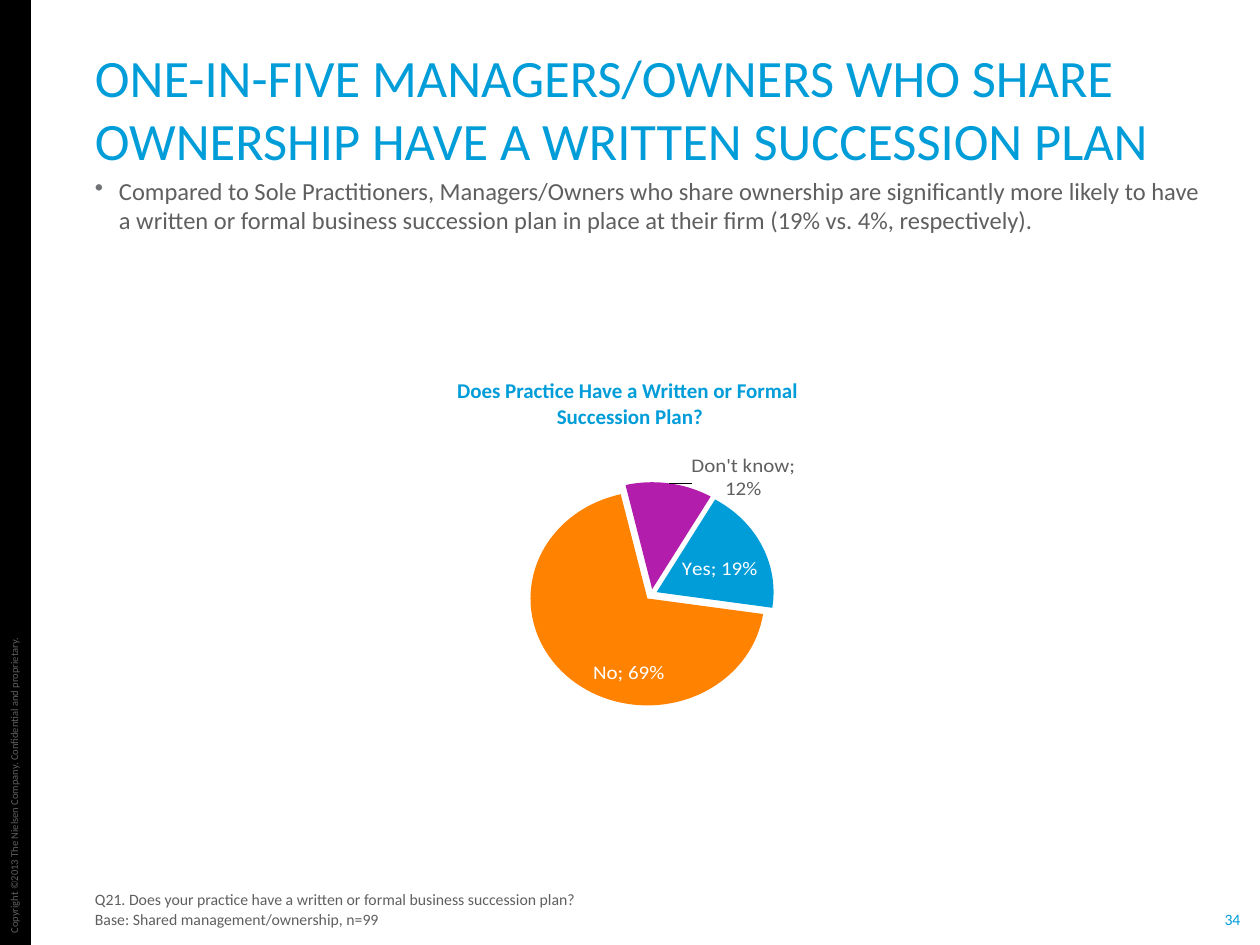
from lxml.etree import SubElement
from pptx import Presentation
from pptx.chart.data import CategoryChartData as Data
from pptx.dml.color import RGBColor as Rgb
from pptx.enum.chart import XL_CHART_TYPE as Kind, XL_LABEL_POSITION as Spot
from pptx.enum.shapes import MSO_SHAPE as Form
from pptx.enum.text import MSO_ANCHOR as Anchor, MSO_AUTO_SIZE as Fit, PP_ALIGN as Align
from pptx.oxml import parse_xml
from pptx.oxml.ns import nsdecls, qn
from pptx.util import Pt

EMU = 914400 / 126
HUES = {"blue": "009DD9", "orange": "FF8300", "purple": "B21DAC",
        "gray": "5F5F5F", "dot": "707276", "black": "000000", "white": "FFFFFF"}


def px(n):
    return round(n * EMU)


def rgb(hue):
    return Rgb.from_string(HUES[hue])


def layout(x, y, w=None, h=None):
    """Manual chart layout: an offset for a label, a full frame for the plot."""
    parts = [("x", x), ("y", y)]
    if w is not None:
        parts = [("xMode", "edge"), ("yMode", "edge")] + parts + [("w", w), ("h", h)]
        parts.insert(0, ("layoutTarget", "inner"))
    body = "".join(f'<c:{tag} val="{val}"/>' for tag, val in parts)
    return parse_xml(f'<c:layout {nsdecls("c")}><c:manualLayout>{body}'
                     '</c:manualLayout></c:layout>')


class Page:
    face = "Calibri"

    def __init__(self, deck):
        self.slide = deck.slides.add_slide(deck.slide_layouts[5])

    def style(self, font, size, hue, bold=False):
        font.name, font.size, font.bold = self.face, Pt(size), bold
        font.color.rgb = rgb(hue)

    def place(self, shape, box):
        shape.left, shape.top, shape.width, shape.height = map(px, box)

    def bar(self, box, hue):
        shape = self.slide.shapes.add_shape(Form.RECTANGLE, *map(px, box))
        shape.shadow.inherit = False
        shape.fill.solid()
        shape.fill.fore_color.rgb = rgb(hue)
        shape.line.fill.background()

    def set_text(self, shape, lines, size, hue, bold=False, align=Align.LEFT,
                 anchor=Anchor.TOP, side=13, wrap=True, gap=0, bullet=False):
        frame = shape.text_frame
        frame.auto_size, frame.word_wrap = Fit.NONE, wrap
        frame.vertical_anchor = anchor
        frame.margin_left = frame.margin_right = px(side)
        frame.margin_top = frame.margin_bottom = 0
        for i, line in enumerate(lines):
            para = frame.add_paragraph() if i else frame.paragraphs[0]
            para.alignment = align
            para.space_before = Pt(gap if i else 0)
            if bullet:
                self.bullet(para)
            run = para.add_run()
            run.text = line
            self.style(run.font, size, hue, bold)

    def bullet(self, para):
        props = para._p.get_or_add_pPr()
        props.set("marL", str(px(24)))
        props.set("indent", str(-px(24)))
        tint = SubElement(props, qn("a:buClr"))
        SubElement(tint, qn("a:srgbClr")).set("val", HUES["dot"])
        SubElement(props, qn("a:buChar")).set("char", "•")

    def title(self, box, text, size, hue):
        shape = self.slide.shapes.title
        self.place(shape, box)
        self.set_text(shape, [text], size, hue, anchor=Anchor.BOTTOM)

    def text(self, box, lines, size, hue, turn=0, **look):
        shape = self.slide.shapes.add_textbox(*map(px, box))
        shape.rotation = turn
        self.set_text(shape, lines, size, hue, **look)

    def pie(self, box, slices, start, burst, frame):
        data = Data(number_format="0%")
        data.categories = [s[0] for s in slices]
        data.add_series("Series 1", [s[1] for s in slices])
        chart = self.slide.shapes.add_chart(Kind.PIE, *map(px, box), data).chart
        chart.has_title = chart.has_legend = False
        self.style(chart.font, 18, "gray")
        plot = chart.plots[0]
        plot.vary_by_categories = True
        series = plot.series[0]
        for i, (_, _, hue, ink, spot, _) in enumerate(slices):
            point = series.points[i]
            point.format.fill.solid()
            point.format.fill.fore_color.rgb = rgb(hue)
            self.style(point.data_label.font, 12, ink)
            point.data_label.position = spot

        # Label wording and offsets
        ser = series._element
        for label, part in zip(ser.iter(qn("c:dLbl")), slices):
            label.find(qn("c:showCatName")).set("val", "1")
            form = parse_xml(f'<c:numFmt {nsdecls("c")} formatCode="0%" sourceLinked="0"/>')
            idx = label.find(qn("c:idx"))
            idx.addnext(form)
            idx.addnext(layout(*part[5]))
            SubElement(label, qn("c:separator")).text = "; "

        # Exploded slices, first angle and plot frame
        ser.find(qn("c:dPt")).addprevious(
            parse_xml(f'<c:explosion {nsdecls("c")} val="{burst}"/>'))
        group = ser.getparent()
        SubElement(group, qn("c:firstSliceAng")).set("val", str(start))
        area = group.getparent()
        for old in area.findall(qn("c:layout")):
            area.remove(old)
        area.insert(0, layout(*frame))


def main():
    deck = Presentation()
    deck.slide_width, deck.slide_height = px(1260), px(945)
    page = Page(deck)

    # Side bar, copyright line and page number
    page.bar((0, 0, 31, 945), "black")
    page.text((-149, 771, 326, 25),
              ["Copyright ©2013 The Nielsen Company. Confidential and proprietary."],
              6, "gray", turn=270, anchor=Anchor.MIDDLE, wrap=False)
    page.text((1223, 910, 19, 19), ["34"], 9, "blue", align=Align.CENTER,
              anchor=Anchor.MIDDLE, side=0, wrap=False)

    # Pie: name, value, fill, label colour, label place, label offset
    page.pie((368, 431, 525, 276), [
        ("Yes", 0.19, "blue", "white", Spot.CENTER, (0.02, 0)),
        ("No", 0.69, "orange", "white", Spot.CENTER, (0.04, 0.14)),
        ("Don't know", 0.12, "purple", "gray", Spot.OUTSIDE_END, (0.04, 0.03)),
    ], 30, 5, (0.26, 0.11, 0.56, 0.89))

    # Title and message
    page.title((82, 93, 1178, 78),
               "ONE-IN-FIVE MANAGERS/OWNERS WHO SHARE OWNERSHIP HAVE A WRITTEN "
               "SUCCESSION PLAN", 30, "blue")
    page.text((82, 176, 1136, 107),
              ["Compared to Sole Practitioners, Managers/Owners who share ownership are "
               "significantly more likely to have a written or formal business succession "
               "plan in place at their firm (19% vs. 4%, respectively)."],
              14, "gray", bullet=True)

    # Chart heading and footnote
    page.text((373, 378, 514, 35),
              ["Does Practice Have a Written or Formal ", "Succession Plan?"],
              12, "blue", bold=True, align=Align.CENTER)
    page.text((82, 878, 1136, 51),
              ["Q21. Does your practice have a written or formal business succession plan?",
               "Base: Shared management/ownership, n=99"],
              9, "gray", anchor=Anchor.BOTTOM, gap=0.6)

    deck.save("out.pptx")


if __name__ == "__main__":
    main()
